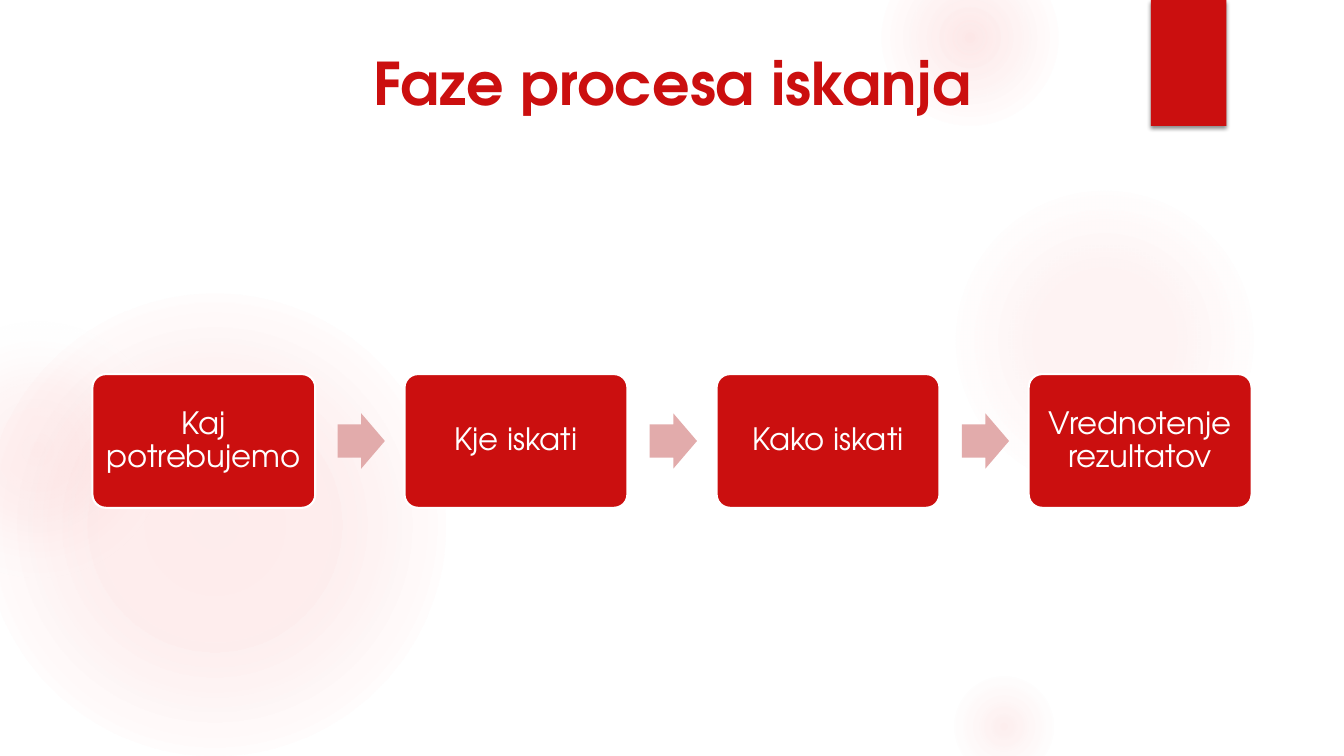
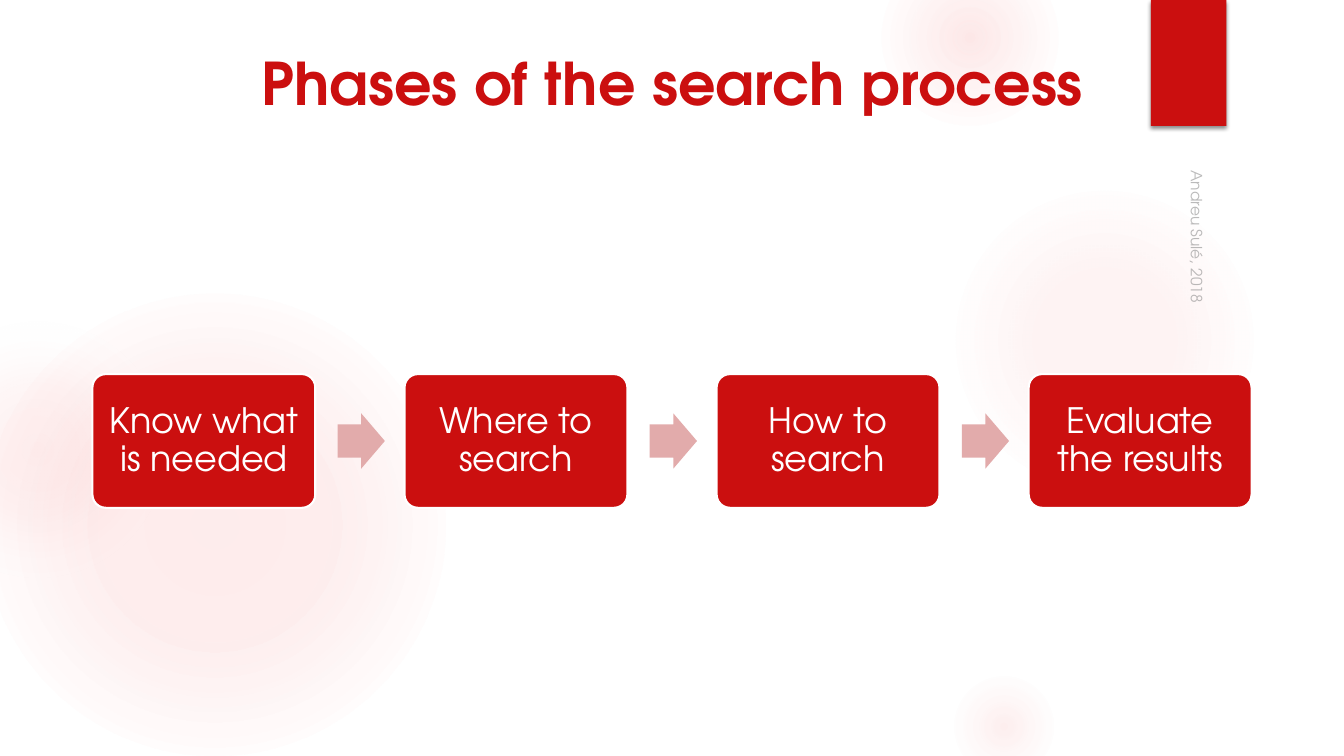
from dataclasses import dataclass

from lxml import etree
from pptx import Presentation
from pptx.dml.color import RGBColor
from pptx.enum.shapes import MSO_SHAPE
from pptx.enum.text import MSO_ANCHOR, PP_ALIGN
from pptx.oxml import parse_xml
from pptx.oxml.ns import nsdecls, qn
from pptx.shapes.autoshape import Shape
from pptx.slide import Slide
from pptx.util import Inches, Length, Pt

ELLIPSE = MSO_SHAPE.OVAL
RECTANGLE = MSO_SHAPE.RECTANGLE
ROUNDED = MSO_SHAPE.ROUNDED_RECTANGLE
ARROW = MSO_SHAPE.RIGHT_ARROW
LEFT, CENTER = PP_ALIGN.LEFT, PP_ALIGN.CENTER
TOP, MIDDLE, BOTTOM = MSO_ANCHOR.TOP, MSO_ANCHOR.MIDDLE, MSO_ANCHOR.BOTTOM

COLORS = {
    "background": "FFFFFF",
    "red": "CB0F0F",
    "glow": "F35C5C",
    "pale": "F3F3F3",
    "arrow": "E2ABAB",
    "text": "FFFFFF",
    "credit": "8C8C8C",
    "shadow": "000000",
}
FONT = "TeX Gyre Adventor"
COLUMNS, ROWS = 160, 90
CELL = Inches(7.5) / ROWS


@dataclass(frozen=True)
class Box:
    """A rectangle in grid columns and rows."""

    column: float
    row: float
    width: float
    height: float

    def lengths(self) -> tuple[Length, ...]:
        """Return left, top, width and height as lengths."""
        sides = (self.column, self.row, self.width, self.height)
        return tuple(Length(round(side * CELL)) for side in sides)


@dataclass(frozen=True)
class Bubble:
    """A round glow with stops of position, opacity and colour name."""

    column: float
    row: float
    size: float
    stops: tuple[tuple[int, int, str], ...]


@dataclass(frozen=True)
class ProcessSlide:
    """The wording and text format of one process slide."""

    title: str
    phases: tuple[str, ...]
    size: int
    inset: float
    credit: str = ""


BUBBLES = (
    Bubble(-2, 35, 55, ((0, 11, "glow"), (36, 10, "glow"), (75, 0, "glow"))),
    Bubble(-11, 38, 31, ((0, 8, "glow"), (36, 5, "glow"), (71, 0, "pale"))),
    Bubble(113, 22, 37, ((0, 7, "glow"), (36, 6, "glow"), (69, 0, "glow"))),
    Bubble(105, -6, 21, ((0, 14, "glow"), (36, 7, "glow"), (73, 0, "glow"))),
    Bubble(113, 80, 13, ((0, 10, "glow"), (31, 5, "glow"), (66, 0, "glow"))),
)
TAB_BOX = Box(137, 0, 9, 15)
TITLE_BOX = Box(11, 5, 138, 17.4)
CREDIT_BOX = Box(117.5, 42.4, 50.6, 4)
FLOW_LEFT, FLOW_WIDTH, FLOW_MIDDLE = 11, 138, 52.5
GAP_SHARE = 0.4

SLIDES = (
    ProcessSlide(
        "Faze procesa iskanja",
        ("Kaj potrebujemo", "Kje iskati", "Kako iskati", "Vrednotenje rezultatov"),
        size=22,
        inset=0.09,
    ),
    ProcessSlide(
        "Phases of the search process",
        ("Know what is needed", "Where to search", "How to search", "Evaluate the results"),
        size=25,
        inset=0.1,
        credit="Andreu Sulé, 2018",
    ),
)


def color(name: str) -> RGBColor:
    """Return a named colour."""
    return RGBColor.from_string(COLORS[name])


def add_shape(slide: Slide, kind: MSO_SHAPE, box: Box, fill: str = "") -> Shape:
    """Add a flat preset shape without outline."""
    shape = slide.shapes.add_shape(kind, *box.lengths())
    shape.shadow.inherit = False
    shape.line.fill.background()
    if fill:
        shape.fill.solid()
        shape.fill.fore_color.rgb = color(fill)
    else:
        shape.fill.background()
    return shape


def write(
    shape: Shape,
    text: str,
    *,
    size: int,
    fill: str,
    bold: bool = False,
    align: PP_ALIGN = CENTER,
    anchor: MSO_ANCHOR = TOP,
    inset: float | None = None,
    spacing: float = 1.0,
    opacity: int = 100,
) -> None:
    """Write one formatted paragraph into a shape."""
    frame = shape.text_frame
    frame.word_wrap = True
    frame.vertical_anchor = anchor
    if inset is not None:
        frame.margin_left = frame.margin_right = Inches(inset)
        frame.margin_top = frame.margin_bottom = Inches(inset)
    paragraph = frame.paragraphs[0]
    paragraph.alignment = align
    paragraph.line_spacing = spacing
    run = paragraph.add_run()
    run.text = text
    run.font.name = FONT
    run.font.size = Pt(size)
    run.font.bold = bold
    run.font.color.rgb = color(fill)
    if opacity < 100:
        tone = run.font.fill._xPr.find(".//" + qn("a:srgbClr"))
        etree.SubElement(tone, qn("a:alpha"), val=str(opacity * 1000))


def add_bubble(slide: Slide, bubble: Bubble) -> None:
    """Add a circle that fades out from its centre."""
    box = Box(bubble.column, bubble.row, bubble.size, bubble.size)
    properties = add_shape(slide, ELLIPSE, box)._element.spPr
    stops = "".join(
        f'<a:gs pos="{position * 1000}"><a:srgbClr val="{COLORS[name]}">'
        f'<a:alpha val="{opacity * 1000}"/></a:srgbClr></a:gs>'
        for position, opacity, name in bubble.stops
    )
    gradient = parse_xml(
        f'<a:gradFill {nsdecls("a")}><a:gsLst>{stops}</a:gsLst><a:path path="circle">'
        '<a:fillToRect l="50000" t="50000" r="50000" b="50000"/></a:path></a:gradFill>'
    )
    properties.replace(properties.find(qn("a:noFill")), gradient)


def add_tab(slide: Slide) -> None:
    """Add the red tab with its soft shadow."""
    tab = add_shape(slide, RECTANGLE, TAB_BOX, "red")
    shadow = parse_xml(
        f'<a:outerShdw {nsdecls("a")} blurRad="{Pt(3)}" dist="{Pt(2)}" dir="5400000" '
        f'rotWithShape="0"><a:srgbClr val="{COLORS["shadow"]}"><a:alpha val="45000"/>'
        "</a:srgbClr></a:outerShdw>"
    )
    tab._element.spPr.find(qn("a:effectLst")).append(shadow)


def add_frame(slide: Slide, title: str) -> None:
    """Add the background, decoration and title that all slides share."""
    slide.background.fill.solid()
    slide.background.fill.fore_color.rgb = color("background")
    for bubble in BUBBLES:
        add_bubble(slide, bubble)
    add_tab(slide)
    heading = slide.shapes.add_textbox(*TITLE_BOX.lengths())
    write(heading, title, size=42, fill="red", bold=True)


def add_flow(slide: Slide, content: ProcessSlide) -> None:
    """Add the phases as equal boxes joined by arrows."""
    count = len(content.phases)
    width = FLOW_WIDTH / (count + GAP_SHARE * (count - 1))
    height = width * 0.6
    arrow_width, arrow_height = width * 0.212, width * 0.248
    for index, phase in enumerate(content.phases):
        left = FLOW_LEFT + index * width * (1 + GAP_SHARE)
        if index:
            arrow_left = left - width * 0.3
            arrow_top = FLOW_MIDDLE - arrow_height / 2
            arrow_box = Box(arrow_left, arrow_top, arrow_width, arrow_height)
            arrow = add_shape(slide, ARROW, arrow_box, "arrow")
            arrow.adjustments[0] = 0.6
        box = Box(left, FLOW_MIDDLE - height / 2, width, height)
        node = add_shape(slide, ROUNDED, box, "red")
        node.adjustments[0] = 0.1
        node.line.color.rgb = color("background")
        node.line.width = Pt(1.5)
        write(node, phase, size=content.size, fill="text", anchor=MIDDLE,
              inset=content.inset, spacing=0.9)


def add_credit(slide: Slide, text: str) -> None:
    """Add the author line turned to read downwards."""
    credit = slide.shapes.add_textbox(*CREDIT_BOX.lengths())
    credit.rotation = 90
    write(credit, text, size=11, fill="credit", align=LEFT, anchor=BOTTOM, opacity=60)


def main() -> None:
    """Build and save the presentation."""
    presentation = Presentation()
    presentation.slide_width = Length(round(COLUMNS * CELL))
    presentation.slide_height = Length(round(ROWS * CELL))
    for content in SLIDES:
        slide = presentation.slides.add_slide(presentation.slide_layouts[6])
        add_frame(slide, content.title)
        add_flow(slide, content)
        if content.credit:
            add_credit(slide, content.credit)
    presentation.save("out.pptx")


if __name__ == "__main__":
    main()
